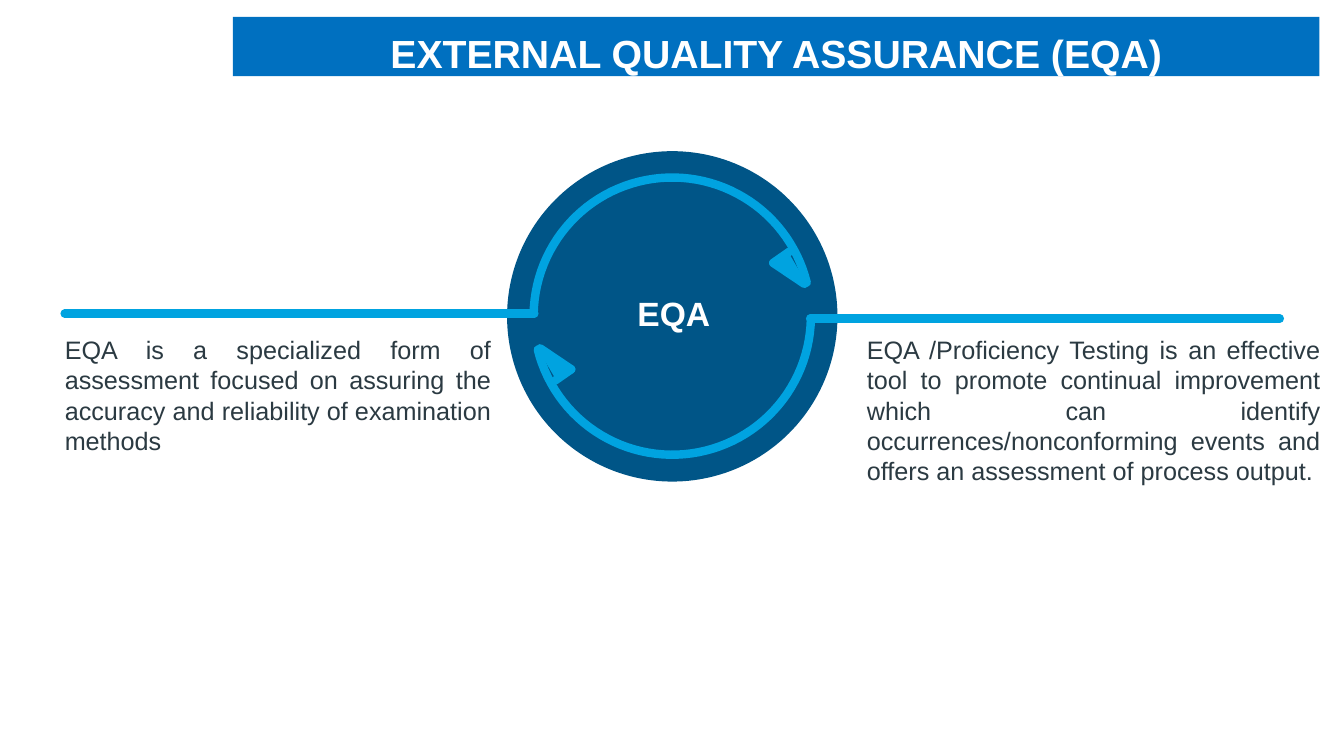
"""Build the External Quality Assurance slide with its circular arrows."""
from math import cos, radians, sin

from lxml.etree import SubElement
from pptx import Presentation
from pptx.dml.color import RGBColor
from pptx.enum.shapes import MSO_CONNECTOR as CONN, MSO_SHAPE as SHAPE
from pptx.enum.text import MSO_ANCHOR as ANCHOR, MSO_AUTO_SIZE as AUTO, PP_ALIGN as ALIGN
from pptx.oxml.ns import qn
from pptx.util import Pt

BLUE = RGBColor(0x00, 0x70, 0xC0)
NAVY = RGBColor(0x00, 0x55, 0x87)
CYAN = RGBColor(0x00, 0xA3, 0xE0)
WHITE = RGBColor(0xFF, 0xFF, 0xFF)
SLATE = RGBColor(0x2B, 0x3A, 0x42)
CX, CY, RADIUS = 480.2, 225.8, 99


def write(sp, text, size, color, align, bold=False, anchor=ANCHOR.TOP, insets=(0, 0, 0, 0)):
    tf = sp.text_frame
    tf.word_wrap = True
    tf.auto_size = AUTO.NONE
    tf.vertical_anchor = anchor
    tf.margin_left, tf.margin_top, tf.margin_right, tf.margin_bottom = map(Pt, insets)
    p = tf.paragraphs[0]
    p.alignment = align
    r = p.add_run()
    r.text = text
    r.font.name = "Arial"
    r.font.size = Pt(size)
    r.font.bold = bold
    r.font.color.rgb = color
    return p


def stroke(sp):
    sp.line.color.rgb = CYAN
    sp.line.width = Pt(6)
    ln = sp.line._get_or_add_ln()
    ln.set("cap", "rnd")
    SubElement(ln, qn("a:round"))
    SubElement(sp._element.spPr, qn("a:effectLst"))


prs = Presentation()
prs.slide_width, prs.slide_height = Pt(960), Pt(540)
s = prs.slides.add_slide(prs.slide_layouts[5])

title = s.shapes.title
title.left, title.top, title.width, title.height = Pt(166.4), Pt(12), Pt(776), Pt(42.5)
title.fill.solid()
title.fill.fore_color.rgb = BLUE
write(title, "EXTERNAL QUALITY ASSURANCE (EQA)", 28, WHITE, ALIGN.CENTER, True,
      insets=(0, 8.64, 0, 0))

disc = s.shapes.add_shape(SHAPE.OVAL, Pt(362.2), Pt(108), Pt(236), Pt(236))
disc.shadow.inherit = False
disc.fill.solid()
disc.fill.fore_color.rgb = NAVY
disc.line.fill.background()

label = s.shapes.add_textbox(Pt(407.5), Pt(168), Pt(147.6), Pt(111))
write(label, "EQA", 24, WHITE, ALIGN.CENTER, True, ANCHOR.MIDDLE, (7.2, 3.6, 7.2, 3.6))

notes = [
    (46.3, 304.5, "EQA is a specialized form of assessment focused on assuring the accuracy "
                  "and reliability of examination methods"),
    (619.2, 324, "EQA /Proficiency Testing is an effective tool to promote continual improvement "
                 "which can identify occurrences/nonconforming events and offers an assessment "
                 "of process output."),
]
for left, width, text in notes:
    sp = s.shapes.add_textbox(Pt(left), Pt(239), Pt(width), Pt(150))
    p = write(sp, text, 18, SLATE, ALIGN.JUSTIFY)
    p.space_after = Pt(6)

segments = [
    ((-434, -1.8), (-98.5, -1.8)),
    ((94.4, -23), (72.1, -38)),
    ((83.6, -46), (72.1, -38)),
]
arc = [(RADIUS * cos(radians(a)), RADIUS * sin(radians(a))) for a in range(181, 347, 3)]

for sign, rotation in ((-1, 321.8), (1, 141.8)):
    head = s.shapes.add_shape(SHAPE.ISOSCELES_TRIANGLE, Pt(CX + sign * 85 - 6.5),
                              Pt(CY - sign * 32.5 - 11.9), Pt(13), Pt(23.8))
    head.adjustments[0] = 0.246
    head.rotation = rotation
    head.shadow.inherit = False
    head.fill.solid()
    head.fill.fore_color.rgb = CYAN
    head.line.fill.background()

    points = [(Pt(CX + sign * x), Pt(CY + sign * y)) for x, y in arc]
    builder = s.shapes.build_freeform(*points[0], scale=1.0)
    builder.add_line_segments(points[1:], close=False)
    sweep = builder.convert_to_shape()
    sweep.fill.background()
    stroke(sweep)

    for (x1, y1), (x2, y2) in segments:
        line = s.shapes.add_connector(CONN.STRAIGHT, Pt(CX + sign * x1), Pt(CY + sign * y1),
                                      Pt(CX + sign * x2), Pt(CY + sign * y2))
        stroke(line)

prs.save("out.pptx")
